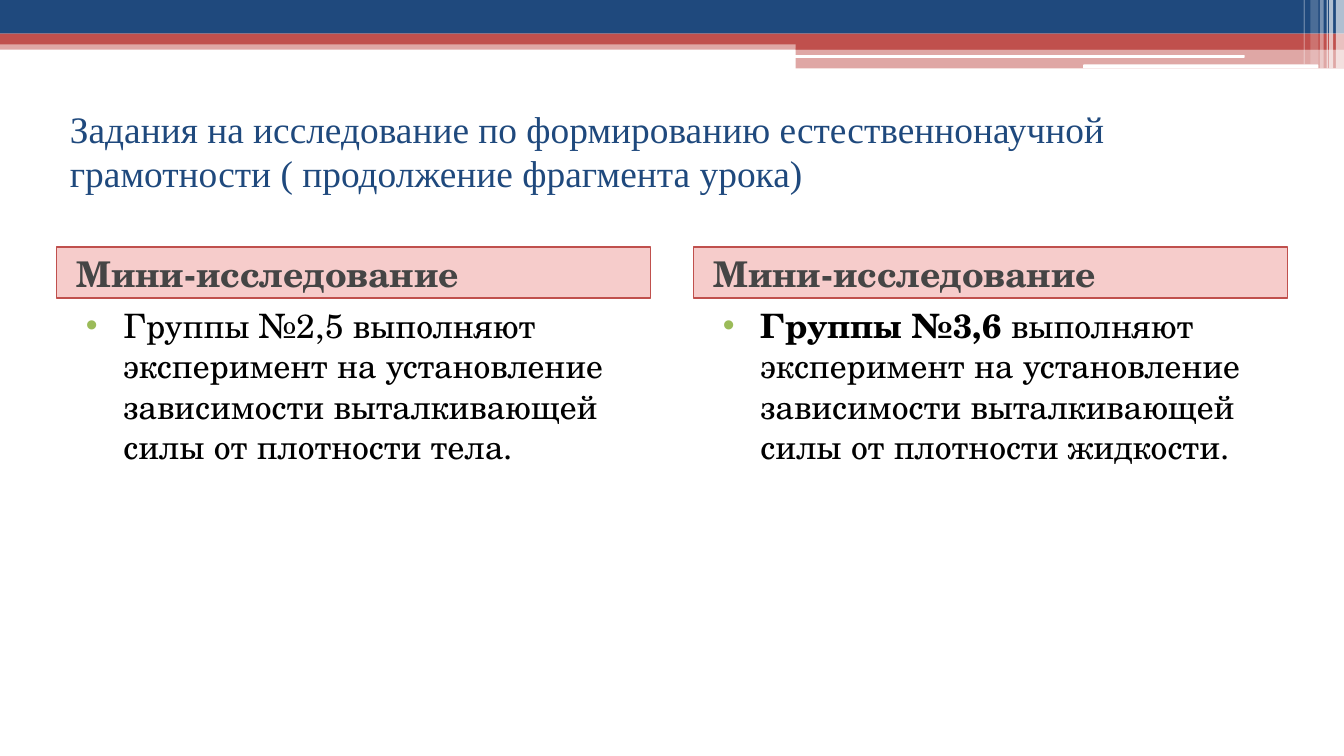
from lxml.etree import SubElement
from pptx import Presentation
from pptx.dml.color import RGBColor
from pptx.enum.shapes import MSO_SHAPE
from pptx.enum.text import MSO_ANCHOR, MSO_AUTO_SIZE, PP_ALIGN
from pptx.oxml.ns import qn
from pptx.util import Inches, Pt

NAVY = RGBColor(0x1F, 0x49, 0x7D)
RED = RGBColor(0xC0, 0x50, 0x4D)
PINK = RGBColor(0xDD, 0x35, 0x30)
GREEN = RGBColor(0x9B, 0xBB, 0x59)
GREY = RGBColor(0x45, 0x45, 0x45)
WHITE = RGBColor(0xFF, 0xFF, 0xFF)
BLACK = RGBColor(0, 0, 0)
TITLE_FONT = "Times New Roman"
BODY_FONT = "TeX Gyre Schola"


def add_box(slide, box, color, opacity=100, kind=MSO_SHAPE.RECTANGLE, line=None):
    shape = slide.shapes.add_shape(kind, *[Inches(length) for length in box])
    shape.shadow.inherit = False
    shape.fill.solid()
    shape.fill.fore_color.rgb = color
    if opacity < 100:
        fill_color = shape.fill._xPr.find(qn("a:solidFill"))[0]
        SubElement(fill_color, qn("a:alpha"), val=str(opacity * 1000))
    if line is None:
        shape.line.fill.background()
    else:
        shape.line.color.rgb = line
        shape.line.width = Pt(1)
    return shape


def write_text(shape, runs, size, font, color, anchor=MSO_ANCHOR.TOP,
               margin=0, indent=0, bullet_color=None):
    """Fill the shape with one paragraph of (text, bold) runs."""
    frame = shape.text_frame
    frame.word_wrap = True
    frame.auto_size = MSO_AUTO_SIZE.NONE
    frame.vertical_anchor = anchor
    paragraph = frame.paragraphs[0]
    paragraph.alignment = PP_ALIGN.LEFT
    properties = paragraph._p.get_or_add_pPr()
    properties.set("marL", str(Inches(margin)))
    properties.set("indent", str(Inches(indent)))
    if bullet_color is not None:
        bullet = SubElement(properties, qn("a:buClr"))
        SubElement(bullet, qn("a:srgbClr"), val=str(bullet_color))
        SubElement(properties, qn("a:buFont"), typeface="Arial")
        SubElement(properties, qn("a:buChar"), char="•")
    for text, bold in runs:
        run = paragraph.add_run()
        run.text = text
        run.font.size = Pt(size)
        run.font.name = font
        run.font.bold = bold
        run.font.color.rgb = color


def add_banner(slide, left, top, width):
    # Full-width bands, then the stepped bands on the right
    step = 5.92
    for x, y, height, color, opacity in [
        (0, 0.3, 0.07, RED, 50),
        (0, 0, 0.25, NAVY, 100),
        (0, 0.25, 0.08, RED, 100),
        (step, 0.3, 0.07, RED, 100),
        (step, 0.36, 0.15, RED, 50),
    ]:
        add_box(slide, (left + x, top + y, width - x, height), color, opacity)

    # White slits
    for x, y, slit_width, height in [(5.91, 0.41, 3.35, 0.02), (8.06, 0.48, 1.75, 0.03)]:
        add_box(slide, (left + x, top + y, slit_width, height), WHITE,
                kind=MSO_SHAPE.ROUNDED_RECTANGLE)

    # Translucent stripes, placed by their distance from the right edge
    for distance, stripe_width, height, opacity in [
        (0.06, 0.06, 0.51, 65),
        (0.11, 0.03, 0.51, 65),
        (0.13, 0.01, 0.51, 60),
        (0.18, 0.03, 0.51, 40),
        (0.25, 0.06, 0.48, 20),
        (0.3, 0.01, 0.48, 30),
    ]:
        add_box(slide, (left + width - distance, top, stripe_width, height), WHITE, opacity)


def add_title(slide, box, text):
    title = slide.shapes.title
    title.left, title.top, title.width, title.height = [Inches(length) for length in box]
    write_text(title, [(text, False)], 20, TITLE_FONT, NAVY, anchor=MSO_ANCHOR.MIDDLE)


def add_column(slide, left, top, width, height, heading, runs):
    heading_height = 0.38
    header = add_box(slide, (left, top, width, heading_height), PINK, 25, line=RED)
    write_text(header, [(heading, True)], 19, BODY_FONT, GREY,
               anchor=MSO_ANCHOR.MIDDLE, margin=0.05)
    body = slide.shapes.add_textbox(Inches(left), Inches(top + heading_height),
                                    Inches(width), Inches(height - heading_height))
    write_text(body, runs, 18, BODY_FONT, BLACK,
               margin=0.4, indent=-0.28, bullet_color=GREEN)


def main():
    # Widescreen slide, 16 to 9
    presentation = Presentation()
    presentation.slide_width = Inches(10)
    presentation.slide_height = Inches(10 * 9 / 16)
    slide = presentation.slides.add_slide(presentation.slide_layouts[5])

    add_banner(slide, 0, 0, 10)
    add_title(slide, (0.42, 0.68, 9.17, 0.88),
              "Задания на исследование по формированию естественнонаучной "
              "грамотности ( продолжение фрагмента урока)")

    # Two research columns; the task opens with a no-break space
    task = " выполняют эксперимент на установление зависимости выталкивающей силы от плотности "
    columns = [
        [("Группы №2,5" + task + "тела.", False)],
        [("Группы №3,6", True), (task + "жидкости.", False)],
    ]
    width, gap = 4.42, 0.32
    for index, runs in enumerate(columns):
        add_column(slide, 0.42 + index * (width + gap), 1.84, width, 3.57,
                   "Мини-исследование", runs)

    presentation.save("out.pptx")


if __name__ == "__main__":
    main()
